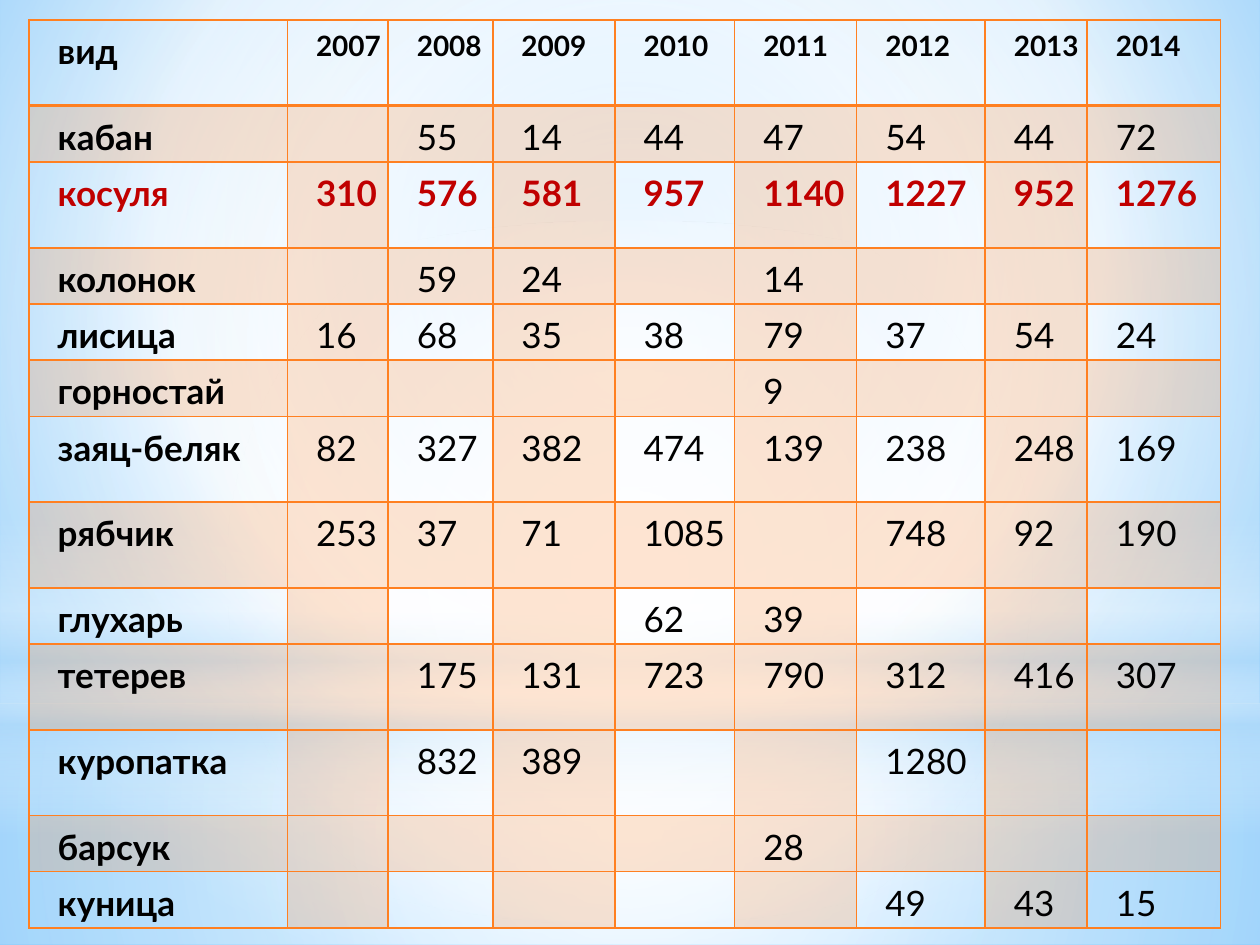
from dataclasses import dataclass
from typing import NamedTuple, Optional

from pptx import Presentation
from pptx.dml.color import RGBColor
from pptx.enum.shapes import MSO_SHAPE as Preset
from pptx.oxml import parse_xml
from pptx.oxml.ns import nsdecls, qn
from pptx.util import Pt


@dataclass(frozen=True)
class Theme:
    font: str = "Lato"
    text: str = "000000"
    accent: str = "C00000"
    orange: str = "FF8021"
    white: str = "FFFFFF"
    pale: str = "B4DCFA"
    sky: str = "9ED5FF"
    deep_sky: str = "5BB9FF"
    year_size: int = 16
    body_size: int = 20
    tint: int = 20  # opacity of the cell bands, percent


THEME = Theme()


class Stop(NamedTuple):
    position: int
    color: str
    opacity: int = 100


class Glow(NamedTuple):
    preset: Preset
    top: float
    height: float
    stops: list[Stop]
    angle: Optional[int] = None  # None makes the gradient circular


class Species(NamedTuple):
    name: str
    counts: str  # one entry per year, "-" for none
    tall: bool = False
    accent: bool = False


WIDTH, HEIGHT = 720, 540
CENTRE = (50, 50, 50, 50)
W, B = THEME.white, THEME.pale
BACKDROP = [Stop(0, THEME.sky), Stop(60, W), Stop(100, THEME.deep_sky)]
GLOWS = [
    Glow(Preset.RECTANGLE, 401.8, 138.2, [Stop(0, W, 91), Stop(37, W, 76), Stop(100, B, 79)]),
    Glow(Preset.RECTANGLE, 0, 401.8, [Stop(0, W, 89), Stop(48, W, 62), Stop(100, B, 79)]),
    Glow(Preset.RECTANGLE, 296.6, 180,
         [Stop(0, W, 0), Stop(29, W, 30), Stop(45, B, 40),
          Stop(55, W, 26), Stop(65, B, 60), Stop(100, W, 0)], 90),
    Glow(Preset.OVAL, 126, 401.8, [Stop(0, W), Stop(56, W, 0)]),
]

YEARS = range(2007, 2015)
SPECIES = [
    Species("кабан", "- 55 14 44 47 54 44 72"),
    Species("косуля", "310 576 581 957 1140 1227 952 1276", tall=True, accent=True),
    Species("колонок", "- 59 24 - 14 - - -"),
    Species("лисица", "16 68 35 38 79 37 54 24"),
    Species("горностай", "- - - - 9 - - -"),
    Species("заяц-беляк", "82 327 382 474 139 238 248 169", tall=True),
    Species("рябчик", "253 37 71 1085 - 748 92 190", tall=True),
    Species("глухарь", "- - - 62 39 - - -"),
    Species("тетерев", "- 175 131 723 790 312 416 307", tall=True),
    Species("куропатка", "- 832 389 - - 1280 - -", tall=True),
    Species("барсук", "- - - - 28 - - -"),
    Species("куница", "- - - - - 49 43 15"),
]
COLUMN_WIDTHS = [147.6, 57.6, 59.8, 69.8, 68.4, 69.8, 73.4, 58.3, 76.3]
TALL_ROW, SHORT_ROW = 49, 27.4
TABLE_LEFT, TABLE_TOP, TABLE_HEIGHT = 16.6, 11.5, 515.5


def set_gradient(parent, stops: list[Stop], angle: Optional[int], focus=CENTRE) -> None:
    """Put a gradient in the place of the parent's empty fill."""
    marks = "".join(
        f'<a:gs pos="{stop.position * 1000}"><a:srgbClr val="{stop.color}">'
        f'<a:alpha val="{stop.opacity * 1000}"/></a:srgbClr></a:gs>' for stop in stops)
    if angle is None:
        sides = " ".join(f'{side}="{part * 1000}"' for side, part in zip("ltrb", focus))
        shade = f'<a:path path="circle"><a:fillToRect {sides}/></a:path>'
    else:
        shade = f'<a:lin ang="{angle * 60000}" scaled="0"/>'
    gradient = parse_xml(f'<a:gradFill {nsdecls("a")} rotWithShape="1">'
                         f'<a:gsLst>{marks}</a:gsLst>{shade}</a:gradFill>')
    parent.replace(parent.find(qn("a:noFill")), gradient)


def draw_glow(slide, glow: Glow) -> None:
    shape = slide.shapes.add_shape(glow.preset, 0, Pt(glow.top), Pt(WIDTH), Pt(glow.height))
    shape.shadow.inherit = False
    shape.line.fill.background()
    shape.fill.background()
    set_gradient(shape.element.spPr, glow.stops, glow.angle)


def style_cell(cell, tinted: bool, bottom: int = 1, top: int = 1) -> None:
    """Set the borders, margins and fill of a cell."""
    properties = cell._tc.get_or_add_tcPr()
    for side, weight in {"L": 1, "R": 1, "T": top, "B": bottom}.items():
        properties.append(parse_xml(
            f'<a:ln{side} {nsdecls("a")} w="{weight * 12700}"><a:solidFill>'
            f'<a:srgbClr val="{THEME.orange}"/></a:solidFill></a:ln{side}>'))
    cell.margin_left = cell.margin_right = cell.margin_top = cell.margin_bottom = Pt(2.2)
    if not tinted:
        cell.fill.background()
        return
    cell.fill.solid()
    cell.fill.fore_color.rgb = RGBColor.from_string(THEME.orange)
    color = properties.find(qn("a:solidFill")).find(qn("a:srgbClr"))
    color.append(parse_xml(f'<a:alpha {nsdecls("a")} val="{THEME.tint * 1000}"/>'))


def write_cell(cell, text: str, size: int, bold: bool, color: str) -> None:
    para = cell.text_frame.paragraphs[0]
    para.text = text
    para.line_spacing = 1.15
    para._p.get_or_add_pPr().set("indent", str(Pt(14.2)))
    for span in para.runs:
        span.font.name = THEME.font
        span.font.size = Pt(size)
        span.font.bold = bold
        span.font.color.rgb = RGBColor.from_string(color)


def draw_table(slide) -> None:
    frame = slide.shapes.add_table(
        len(SPECIES) + 1, len(COLUMN_WIDTHS), Pt(TABLE_LEFT), Pt(TABLE_TOP),
        Pt(sum(COLUMN_WIDTHS)), Pt(TABLE_HEIGHT))
    table = frame.table
    table.first_row = table.horz_banding = False
    for column, width in zip(table.columns, COLUMN_WIDTHS):
        column.width = Pt(width)

    # Header row
    table.rows[0].height = Pt(TALL_ROW)
    for index, heading in enumerate(["вид", *YEARS]):
        cell = table.cell(0, index)
        style_cell(cell, tinted=False, bottom=2)
        size = THEME.year_size if index else THEME.body_size
        write_cell(cell, str(heading), size, True, THEME.text)

    # Species rows: odd rows are tinted throughout, even rows in odd columns
    for row, species in enumerate(SPECIES, start=1):
        table.rows[row].height = Pt(TALL_ROW if species.tall else SHORT_ROW)
        color = THEME.accent if species.accent else THEME.text
        for index, value in enumerate([species.name, *species.counts.split()]):
            cell = table.cell(row, index)
            style_cell(cell, tinted=bool(row % 2 or index % 2), top=2 if row == 1 else 1)
            if value != "-":
                bold = index == 0 or species.accent
                write_cell(cell, value, THEME.body_size, bold, color)
    frame.height = Pt(TABLE_HEIGHT)


def main() -> None:
    deck = Presentation()
    deck.slide_width, deck.slide_height = Pt(WIDTH), Pt(HEIGHT)
    page = deck.slides.add_slide(deck.slide_layouts[6])

    # Backdrop
    page.background.fill.background()
    backdrop = next(page.element.iter(qn("p:bgPr")))
    set_gradient(backdrop, BACKDROP, None, (20, 10, 20, 60))
    for glow in GLOWS:
        draw_glow(page, glow)

    draw_table(page)
    deck.save("out.pptx")


if __name__ == "__main__":
    main()
